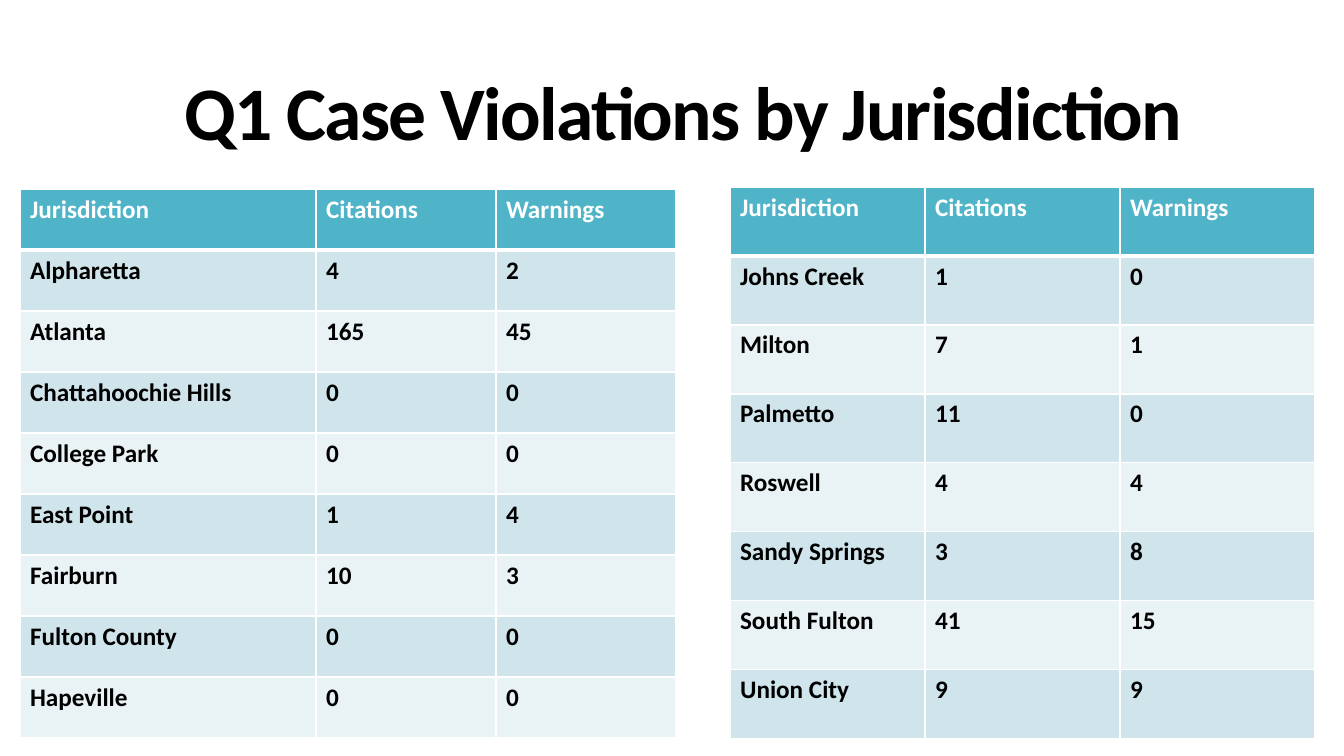
from dataclasses import dataclass

from lxml.etree import SubElement
from pptx import Presentation
from pptx.dml.color import RGBColor
from pptx.enum.text import MSO_ANCHOR, MSO_AUTO_SIZE, PP_ALIGN
from pptx.oxml.ns import qn
from pptx.util import Emu, Pt

COLORS = {
    "header": "50B4C8",
    "odd": "D0E5EB",
    "even": "E9F2F5",
    "white": "FFFFFF",
    "black": "000000",
}
HEADINGS = ("Jurisdiction", "Citations", "Warnings")
THIN, THICK = 1, 3


@dataclass(frozen=True)
class CaseTable:
    left: int
    top: int
    column_widths: tuple[int, ...]
    row_height: int
    cases: tuple[tuple[str, int, int], ...]


TABLES = (
    CaseTable(20, 189, (296, 180, 180), 61, (
        ("Alpharetta", 4, 2),
        ("Atlanta", 165, 45),
        ("Chattahoochie Hills", 0, 0),
        ("College Park", 0, 0),
        ("East Point", 1, 4),
        ("Fairburn", 10, 3),
        ("Fulton County", 0, 0),
        ("Hapeville", 0, 0),
    )),
    CaseTable(730, 187, (195, 195, 195), 69, (
        ("Johns Creek", 1, 0),
        ("Milton", 7, 1),
        ("Palmetto", 11, 0),
        ("Roswell", 4, 4),
        ("Sandy Springs", 3, 8),
        ("South Fulton", 41, 15),
        ("Union City", 9, 9),
    )),
)


def px(length: int) -> Emu:
    return Emu(round(length * 914400 / 100.8))


def rgb(name: str) -> RGBColor:
    return RGBColor.from_string(COLORS[name])


def write(para, text: str, size: int, color: str):
    """Add one bold span to a paragraph and return it."""
    span = para.add_run()
    span.text = text
    for name, value in {"name": "Calibri", "size": Pt(size), "bold": True}.items():
        setattr(span.font, name, value)
    span.font.color.rgb = rgb(color)
    return span


def set_borders(cell, widths: dict[str, int]) -> None:
    """Draw white cell borders; they must come before the fill."""
    properties = cell._tc.get_or_add_tcPr()
    for index, (side, width) in enumerate(widths.items()):
        line = SubElement(properties, qn(f"a:ln{side}"), w=str(Pt(width)))
        fill = SubElement(line, qn("a:solidFill"))
        SubElement(fill, qn("a:srgbClr"), val=COLORS["white"])
        properties.insert(index, line)


def add_case_table(page, spec_table: CaseTable) -> None:
    rows = (HEADINGS, *spec_table.cases)
    frame = page.shapes.add_table(
        len(rows), len(HEADINGS), px(spec_table.left), px(spec_table.top),
        px(sum(spec_table.column_widths)), px(spec_table.row_height * len(rows)))
    table = frame.table
    for column, width in zip(table.columns, spec_table.column_widths):
        column.width = px(width)

    for row_index, values in enumerate(rows):
        table.rows[row_index].height = px(spec_table.row_height)
        is_header = row_index == 0
        band = "header" if is_header else "odd" if row_index % 2 else "even"
        # The header rule is shared with the first body row
        borders = {
            "L": THIN,
            "R": THIN,
            "T": THICK if row_index == 1 else THIN,
            "B": THICK if is_header else THIN,
        }
        for column_index, value in enumerate(values):
            cell = table.cell(row_index, column_index)
            cell.fill.solid()
            cell.fill.fore_color.rgb = rgb(band)
            set_borders(cell, borders)
            write(cell.text_frame.paragraphs[0], str(value), 18,
                  "white" if is_header else "black")


def add_title(page, text: str) -> None:
    title = page.shapes.title
    box = {"left": 174, "top": 52, "width": 1187, "height": 130}
    for name, value in box.items():
        setattr(title, name, px(value))
    frame = title.text_frame
    frame.auto_size = MSO_AUTO_SIZE.NONE
    frame.vertical_anchor = MSO_ANCHOR.MIDDLE
    para = frame.paragraphs[0]
    para.alignment = PP_ALIGN.LEFT
    para.line_spacing = 0.85
    span = write(para, text, 54, "black")
    span._r.get_or_add_rPr().set("spc", "-120")


def main() -> None:
    deck = Presentation()
    deck.slide_width, deck.slide_height = px(1344), px(756)
    page = deck.slides.add_slide(deck.slide_layouts[5])

    # Title
    add_title(page, "Q1 Case Violations by Jurisdiction")

    # Jurisdiction tables
    for case_table in TABLES:
        add_case_table(page, case_table)

    deck.save("out.pptx")


if __name__ == "__main__":
    main()
